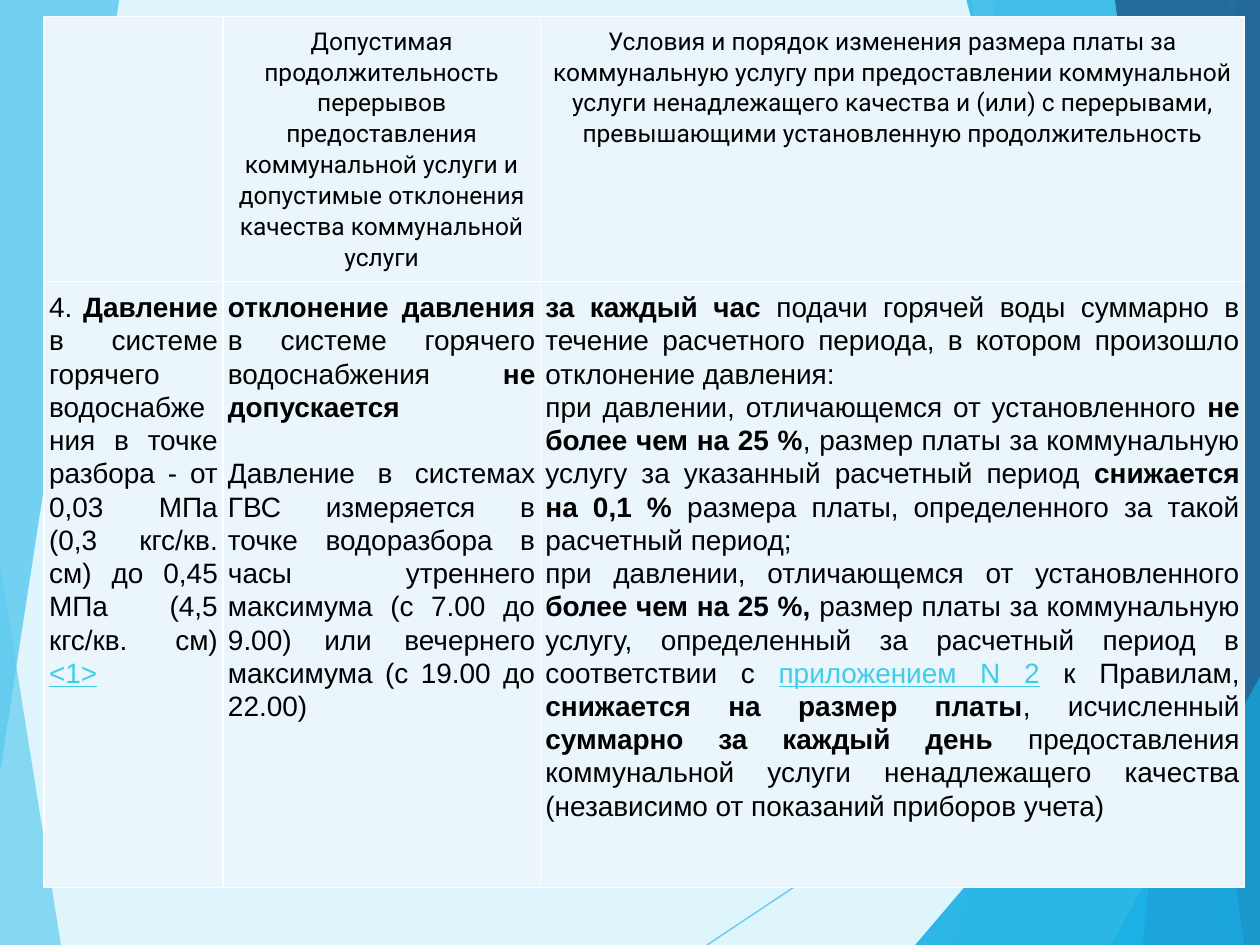
"""Build the slide on hot water pressure rules: a table over a faceted backdrop."""
from pptx import Presentation
from pptx.dml.color import RGBColor as Rgb
from pptx.enum.shapes import MSO_CONNECTOR as Conn
from pptx.enum.text import PP_ALIGN as Align
from pptx.oxml import parse_xml
from pptx.oxml.ns import qn
from pptx.util import Pt

THEME = {
    "back": "DFF5FC", "cell": "EAF6FC", "edge": "FFFFFF", "ink": "000000",
    "link": "3FCDE7", "sky": "5FCBEF", "cyan": "17B0E4", "blue": "2E83C3",
    "navy": "226292",
    "head": ("Roboto", 14, Align.CENTER), "body": ("Arial", 16, Align.JUSTIFY),
    "lead": 1.07, "gap": 19,
}
NS = "http://schemas.openxmlformats.org/drawingml/2006/main"

HEAD = [
    [],
    [[("", "Допустимая продолжительность перерывов предоставления коммунальной "
           "услуги и допустимые отклонения качества коммунальной услуги")]],
    [[("", "Условия и порядок изменения размера платы за коммунальную услугу при "
           "предоставлении коммунальной услуги ненадлежащего качества и (или) с "
           "перерывами, превышающими установленную продолжительность")]],
]
BODY = [
    [[("", "4. "), ("bold", "Давление "),
      ("", "в системе горячего водоснабжения в точке разбора - от 0,03 МПа "
           "(0,3 кгс/кв. см) до 0,45 МПа (4,5 кгс/кв. см) "),
      ("link", "<1>")]],
    [[("bold", "отклонение давления "), ("", "в системе горячего водоснабжения "),
      ("bold", "не допускается")],
     [("", "Давление в системах ГВС измеряется в точке водоразбора в часы "
           "утреннего максимума (с 7.00 до 9.00) или вечернего максимума "
           "(с 19.00 до 22.00)")]],
    [[("bold", "за каждый час "),
      ("", "подачи горячей воды суммарно в течение расчетного периода, в котором "
           "произошло отклонение давления:")],
     [("", "при давлении, отличающемся от установленного "),
      ("bold", "не более чем на 25 %"),
      ("", ", размер платы за коммунальную услугу за указанный расчетный период "),
      ("bold", "снижается на 0,1 % "),
      ("", "размера платы, определенного за такой расчетный период;")],
     [("", "при давлении, отличающемся от установленного "),
      ("bold", "более чем на 25 %, "),
      ("", "размер платы за коммунальную услугу, определенный за расчетный период "
           "в соответствии с "),
      ("link", "приложением N 2"), ("", " к Правилам, "),
      ("bold", "снижается на размер платы"), ("", ", исчисленный "),
      ("bold", "суммарно за каждый день "),
      ("", "предоставления коммунальной услуги ненадлежащего качества "
           "(независимо от показаний приборов учета)")]],
]
ROWS = [("head", HEAD, 130.3), ("body", BODY, 346.3)]
COLS = [102.2, 181.4, 402.5]
SPACED = (1, 1, 1)

FOOT = ("sky", 70, [(-1, 316), (35, 541), (-1, 540)])
SIDE = ("sky", 85, [(-1, 0), (68, -1), (68, 1), (-1, 448)])
RAYS = [(404, 540, 721, 329), (554, 0, 651, 540)]
FACETS = [
    ("sky", 36, [(702, 0), (543, 540), (721, 541), (721, 1)]),
    ("sky", 20, [(567, -1), (662, 540), (721, 540), (721, -1)]),
    ("cyan", 66, [(523, 540), (720, 309), (721, 540)]),
    ("cyan", 50, [(552, -1), (698, 540), (721, 539), (721, -1)]),
    ("blue", 70, [(706, -1), (653, 540), (721, 540), (720, -1)]),
    ("navy", 82, [(637, -1), (711, 540), (721, 540), (720, -1)]),
    ("cyan", 66, [(635, 540), (721, 385), (721, 540)]),
]


def tint(fill, name):
    fill.solid()
    fill.fore_color.rgb = Rgb.from_string(THEME[name])


def fade(shape, rate):
    for clr in shape._element.spPr.iter(qn("a:srgbClr")):
        clr.append(parse_xml(f'<a:alpha xmlns:a="{NS}" val="{rate * 1000}"/>'))


def facet(slide, name, rate, pts):
    pen = slide.shapes.build_freeform(*pts[0], scale=Pt(1))
    pen.add_line_segments(pts[1:], close=True)
    shape = pen.convert_to_shape()
    shape.shadow.inherit = False
    tint(shape.fill, name)
    shape.line.fill.background()
    fade(shape, rate)


def ray(slide, ends):
    line = slide.shapes.add_connector(Conn.STRAIGHT, *map(Pt, ends))
    line.line.width = Pt(0.75)
    tint(line.line.fill, "sky")
    fade(line, 70)
    line._element.spPr.append(parse_xml(f'<a:effectLst xmlns:a="{NS}"/>'))


def frame(cell):
    props = cell._tc.get_or_add_tcPr()
    for spot, side in enumerate("LRTB"):
        props.insert(spot, parse_xml(
            f'<a:ln{side} xmlns:a="{NS}" w="{Pt(1)}"><a:solidFill>'
            f'<a:srgbClr val="{THEME["edge"]}"/></a:solidFill></a:ln{side}>'))


def write(cell, paras, kind, spot):
    font, size, align = THEME[kind]
    for num, runs in enumerate(paras):
        para = cell.text_frame.paragraphs[0] if num == 0 else cell.text_frame.add_paragraph()
        para.alignment, para.line_spacing = align, THEME["lead"]
        if (*spot, num) == SPACED:
            para.space_before = Pt(THEME["gap"])
        for look, text in runs:
            run = para.add_run()
            run.text = text
            run.font.name, run.font.size = font, Pt(size)
            run.font.bold = look == "bold"
            run.font.underline = look == "link"
            run.font.color.rgb = Rgb.from_string(THEME["link" if look == "link" else "ink"])


def grid(slide):
    box = map(Pt, (25.2, 9.4, sum(COLS), sum(row[2] for row in ROWS)))
    table = slide.shapes.add_table(len(ROWS), len(COLS), *box).table
    table.first_row = table.horz_banding = False
    for col, width in zip(table.columns, COLS):
        col.width = Pt(width)
    for y, (kind, cells, height) in enumerate(ROWS):
        table.rows[y].height = Pt(height)
        for x, paras in enumerate(cells):
            cell = table.cell(y, x)
            cell.margin_left = cell.margin_right = Pt(2.9)
            cell.margin_top = cell.margin_bottom = Pt(5)
            tint(cell.fill, "cell")
            frame(cell)
            write(cell, paras, kind, (y, x))


def main():
    deck = Presentation()
    deck.slide_width, deck.slide_height = Pt(720), Pt(540)
    slide = deck.slides.add_slide(deck.slide_layouts[6])
    tint(slide.background.fill, "back")
    facet(slide, *FOOT)
    for _ in range(2):
        for ends in RAYS:
            ray(slide, ends)
        for part in FACETS:
            facet(slide, *part)
    facet(slide, *SIDE)
    grid(slide)
    deck.save("out.pptx")


if __name__ == "__main__":
    main()
